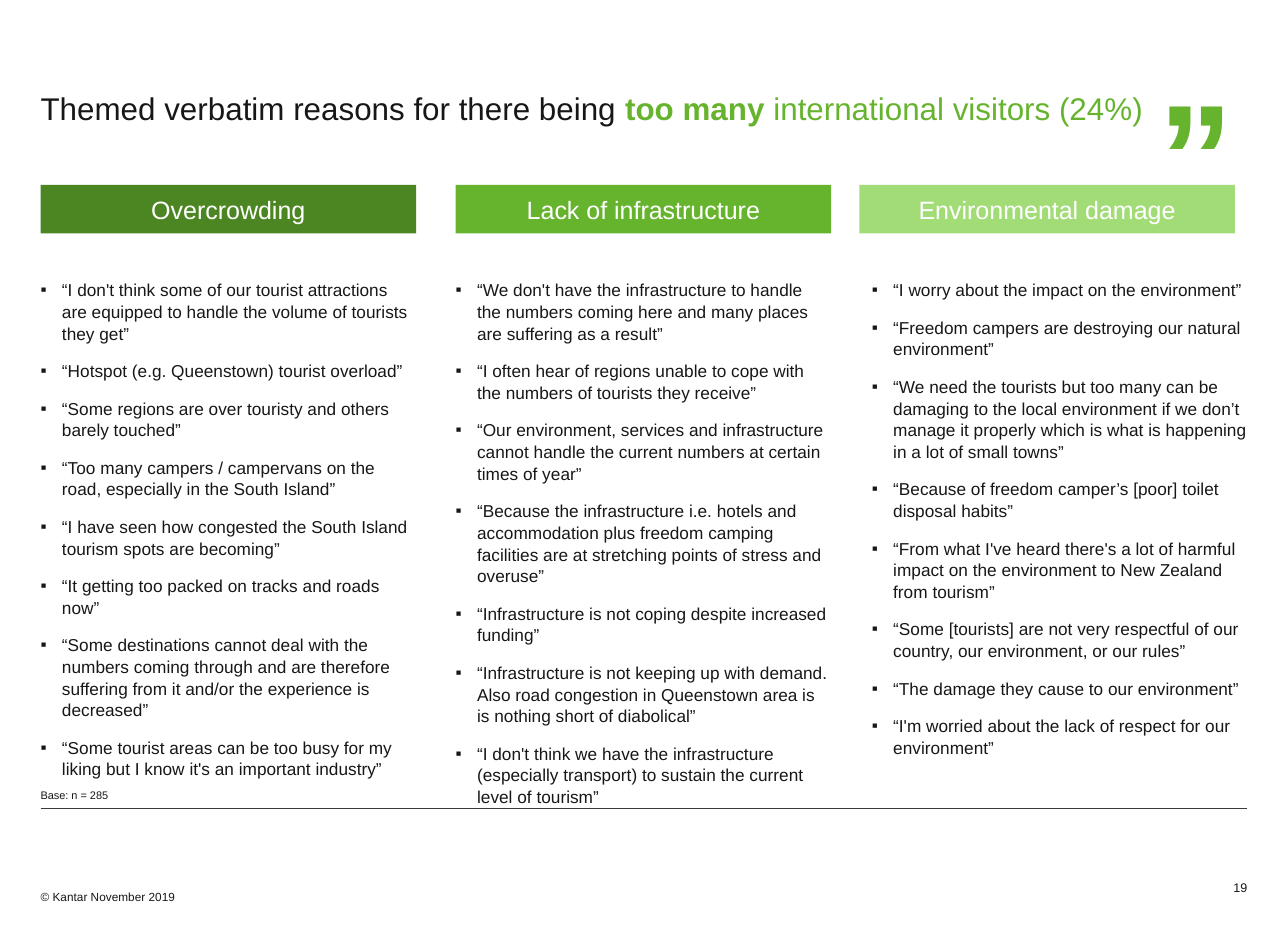
from lxml import etree
from pptx import Presentation
from pptx.dml.color import RGBColor
from pptx.enum.shapes import MSO_CONNECTOR, MSO_SHAPE
from pptx.enum.text import MSO_ANCHOR as Anchor, PP_ALIGN as Align
from pptx.oxml.ns import qn
from pptx.util import Pt

PX = 9144  # 100 px to the inch
INK = RGBColor(0x17, 0x17, 0x17)
RULE = RGBColor(0x3A, 0x3A, 0x3A)
WHITE = RGBColor(0xFF, 0xFF, 0xFF)
DARK = RGBColor(0x4C, 0x86, 0x22)
GREEN = RGBColor(0x66, 0xB3, 0x2E)
LIGHT = RGBColor(0xA2, 0xDC, 0x77)

TITLE = [
    ("Themed verbatim reasons for there being ", INK, False),
    ("too many ", GREEN, True),
    ("international visitors (24%)", GREEN, False),
]

# Theme, colour, left of header, left of quotes, quotes
THEMES = [
    ("Overcrowding", DARK, 36, 36, [
        "“I don't think some of our tourist attractions are equipped to handle the volume of tourists they get”",
        "“Hotspot (e.g. Queenstown) tourist overload”",
        "“Some regions are over touristy and others barely touched”",
        "“Too many campers / campervans on the road, especially in the South Island”",
        "“I have seen how congested the South Island tourism spots are becoming”",
        "“It getting too packed on tracks and roads now”",
        "“Some destinations cannot deal with the numbers coming through and are therefore "
        "suffering from it and/or the experience is decreased”",
        "“Some tourist areas can be too busy for my liking but I know it's an important industry”",
    ]),
    ("Lack of infrastructure", GREEN, 404, 404, [
        "“We don't have the infrastructure to handle the numbers coming here and many places "
        "are suffering as a result”",
        "“I often hear of regions unable to cope with the numbers of tourists they receive”",
        "“Our environment, services and infrastructure cannot handle the current numbers at "
        "certain times of year”",
        "“Because the infrastructure i.e. hotels and accommodation plus freedom camping "
        "facilities are at stretching points of stress and overuse”",
        "“Infrastructure is not coping despite increased funding”",
        "“Infrastructure is not keeping up with demand. Also road congestion in Queenstown "
        "area is is nothing short of diabolical”",
        "“I don't think we have the infrastructure (especially transport) to sustain the "
        "current level of tourism”",
    ]),
    ("Environmental damage", LIGHT, 762, 773, [
        "“I worry about the impact on the environment”",
        "“Freedom campers are destroying our natural environment”",
        "“We need the tourists but too many can be damaging to the local environment if we "
        "don’t manage it properly which is what is happening in a lot of small towns”",
        "“Because of freedom camper’s [poor] toilet disposal habits”",
        "“From what I've heard there's a lot of harmful impact on the environment to New "
        "Zealand from tourism”",
        "“Some [tourists] are not very respectful of our country, our environment, or our rules”",
        "“The damage they cause to our environment”",
        "“I'm worried about the lack of respect for our environment”",
    ]),
]


def px(*vals):
    return [int(v * PX) for v in vals]


def bullet(para):
    props = para._p.get_or_add_pPr()
    hang = 19 * PX
    props.set("marL", str(hang))
    props.set("indent", str(-hang))
    etree.SubElement(props, qn("a:buFont")).set("typeface", "Arial")
    etree.SubElement(props, qn("a:buChar")).set("char", "▪")


def write(shape, paras, size=11, color=INK, bold=False, align=Align.LEFT,
          anchor=Anchor.TOP, top=0, foot=0, after=0, lead=None, dots=False):
    """Fill a shape; a paragraph is a string or a list of (text, colour, bold)."""
    frame = shape.text_frame
    frame.word_wrap = True
    frame.vertical_anchor = anchor
    frame.margin_left = frame.margin_right = 0
    frame.margin_top, frame.margin_bottom = px(top, foot)
    for i, item in enumerate(paras):
        para = frame.paragraphs[0] if i == 0 else frame.add_paragraph()
        if dots:
            bullet(para)
        para.alignment = align
        para.space_after = Pt(after)
        if lead:
            para.line_spacing = lead
        runs = [(item, color, bold)] if isinstance(item, str) else item
        for text, tint, heavy in runs:
            run = para.add_run()
            run.text = text
            font = run.font
            font.name, font.size, font.bold = "Arial", Pt(size), heavy
            font.color.rgb = tint


def label(slide, box, paras, **style):
    write(slide.shapes.add_textbox(*px(*box)), paras, **style)


def head(slide, x, y, w, h):
    title = slide.shapes.title
    title.left, title.top, title.width, title.height = px(x, y, w, h)
    write(title, [TITLE], size=20, top=26, lead=1.05)
    # Large closing quote mark at the right
    label(slide, (x + w - 101, y - 10, 89, 84), ["”"], size=96, color=GREEN,
          bold=True, align=Align.RIGHT, top=12)


def column(slide, theme, y, w, h):
    name, fill, left, inner, quotes = theme
    bar = slide.shapes.add_shape(MSO_SHAPE.RECTANGLE, *px(left, y, w, 43))
    bar.shadow.inherit = False
    bar.fill.solid()
    bar.fill.fore_color.rgb = fill
    bar.line.fill.background()
    write(bar, [name], size=16, color=WHITE, align=Align.CENTER, anchor=Anchor.MIDDLE)
    label(slide, (inner, y + 83, w, h - 83), quotes, after=10, lead=1.05, dots=True)


def footer(slide, x, y, w):
    label(slide, (x, y - 29, 945, 23), ["Base: n = 285"], size=7, anchor=Anchor.BOTTOM)
    rule = slide.shapes.add_connector(MSO_CONNECTOR.STRAIGHT, *px(x, y, x + w, y))
    rule.line.color.rgb = RULE
    rule.line.width = Pt(0.75)
    etree.SubElement(rule._element.spPr, qn("a:effectLst"))
    label(slide, (x, y + 48, 278, 58), ["© Kantar November 2019"], size=7.5,
          anchor=Anchor.BOTTOM, foot=31)
    label(slide, (x + w - 63, y + 46, 63, 30), ["19"], size=8, align=Align.RIGHT,
          anchor=Anchor.BOTTOM)


def main():
    deck = Presentation()
    deck.slide_width, deck.slide_height = px(1142, 827)
    slide = deck.slides.add_slide(deck.slide_layouts[5])
    head(slide, 36, 51, 1070, 92)
    for theme in THEMES:
        column(slide, theme, 164, 333, 516)
    footer(slide, 36, 717, 1070)
    deck.save("out.pptx")


if __name__ == "__main__":
    main()
